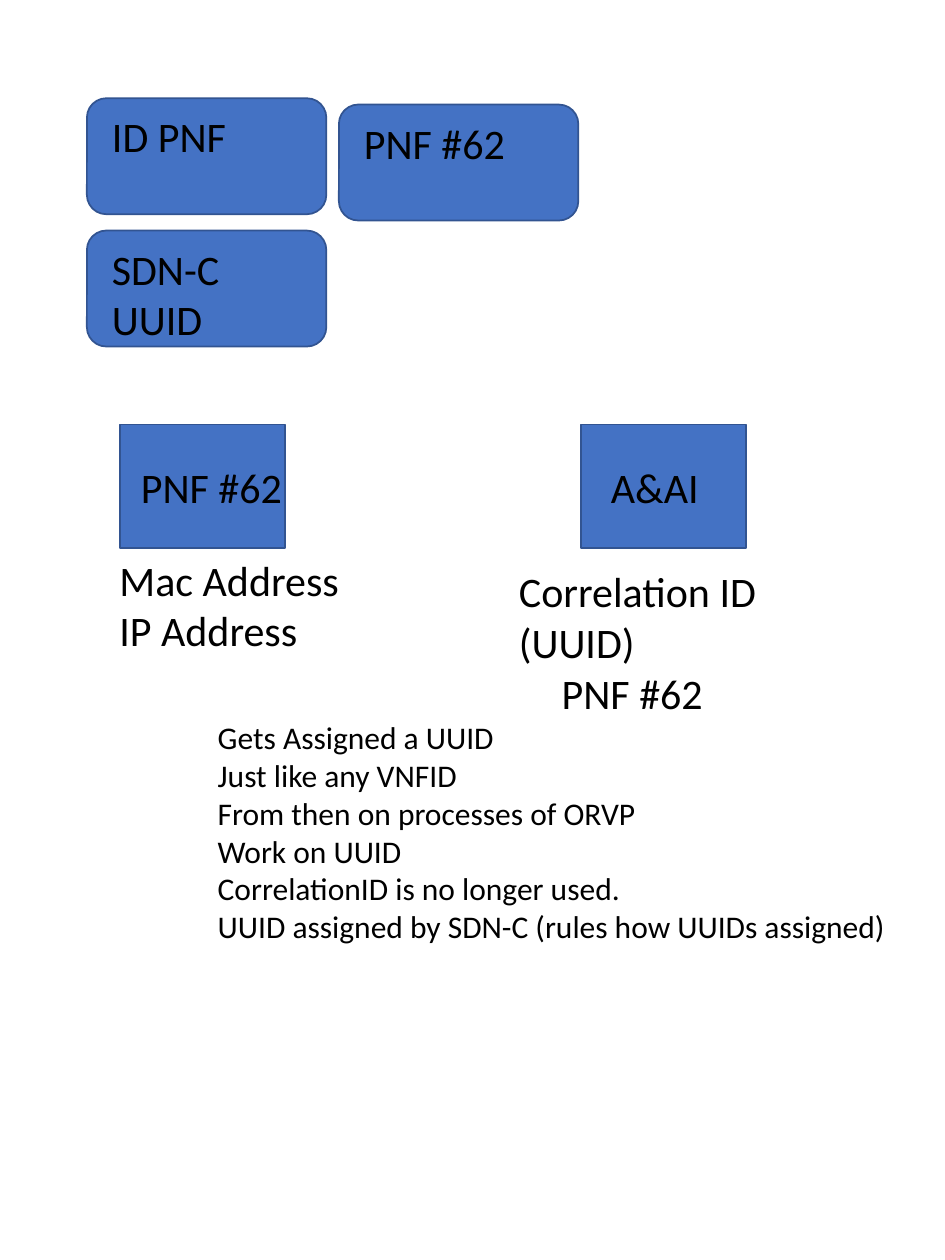
from pptx import Presentation
from pptx import util as u
from pptx.dml.color import RGBColor
from pptx.enum import shapes, text

COLS, ROWS = 75, 100
FILL, LINE, INK = "4472C4", "325491", "000000"

prs = Presentation()
prs.slide_width, prs.slide_height = u.Inches(7.5), u.Inches(10)
CELL_W, CELL_H = prs.slide_width / COLS, prs.slide_height / ROWS


def color(value):
    return RGBColor.from_string(value)


def place(x, y, w, h):
    return [u.Emu(round(n * cell))
            for n, cell in zip((x, y, w, h), (CELL_W, CELL_H) * 2)]


def add_text(s, content, x, y, w, h, size=24, font="Calibri", ink=INK, wrap=False):
    tf = s.shapes.add_textbox(*place(x, y, w, h)).text_frame
    tf.word_wrap = wrap
    tf.auto_size = text.MSO_AUTO_SIZE.SHAPE_TO_FIT_TEXT
    for i, line in enumerate(content.split("\n")):
        p = tf.add_paragraph() if i else tf.paragraphs[0]
        r = p.add_run()
        r.text = line
        r.font.size, r.font.name = u.Pt(size), font
        r.font.color.rgb = color(ink)


def add_box(s, kind, x, y, w, h):
    sp = s.shapes.add_shape(kind, *place(x, y, w, h))
    sp.shadow.inherit = False
    sp.fill.solid()
    sp.fill.fore_color.rgb = color(FILL)
    sp.line.color.rgb = color(LINE)
    sp.line.width = u.Pt(1)


def id_cards(s, x, y):
    cards = [("ID PNF", 0, 0, 11.1, 5), ("PNF #62", 20, 0.5, 13.3, 5),
             ("SDN-C\nUUID", 0, 10.5, 10.6, 9.1)]
    for label, dx, dy, w, h in cards:
        add_box(s, shapes.MSO_SHAPE.ROUNDED_RECTANGLE, x + dx, y + dy, 19, 9.2)
        add_text(s, label, x + dx + 1, y + dy + 0.5, w, h)


def node(s, label, x, y, label_dx, label_w):
    add_box(s, shapes.MSO_SHAPE.RECTANGLE, x, y, 13.1, 9.8)
    add_text(s, label, x + label_dx, y + 2.4, label_w, 5)


def nodes(s, x, y):
    node(s, "PNF #62", x, y, 0.7, 13.3)
    add_text(s, "Mac Address\nIP Address", x - 1, y + 9.8, 19.6, 9.1)
    node(s, "A&AI", x + 36.6, y, 1.4, 9)
    add_text(s, "Correlation ID\n(UUID)", x + 30.7, y + 10.7, 21, 9.1)
    add_text(s, "PNF #62", x + 34.1, y + 18.8, 13.3, 5)


def uuid_notes(s, x, y, w, h):
    lines = ["Gets Assigned a UUID", "Just like any VNFID",
             "From then on processes of ORVP", "Work on UUID",
             "CorrelationID is no longer used.",
             "UUID assigned by SDN-C (rules how UUIDs assigned)"]
    add_text(s, "\n".join(lines), x, y, w, h, size=18, wrap=True)


s = prs.slides.add_slide(prs.slide_layouts[6])
nodes(s, 9.5, 33.7)
uuid_notes(s, 16.3, 56.5, 55.6, 19.2)
id_cards(s, 6.9, 7.8)
prs.save("out.pptx")
